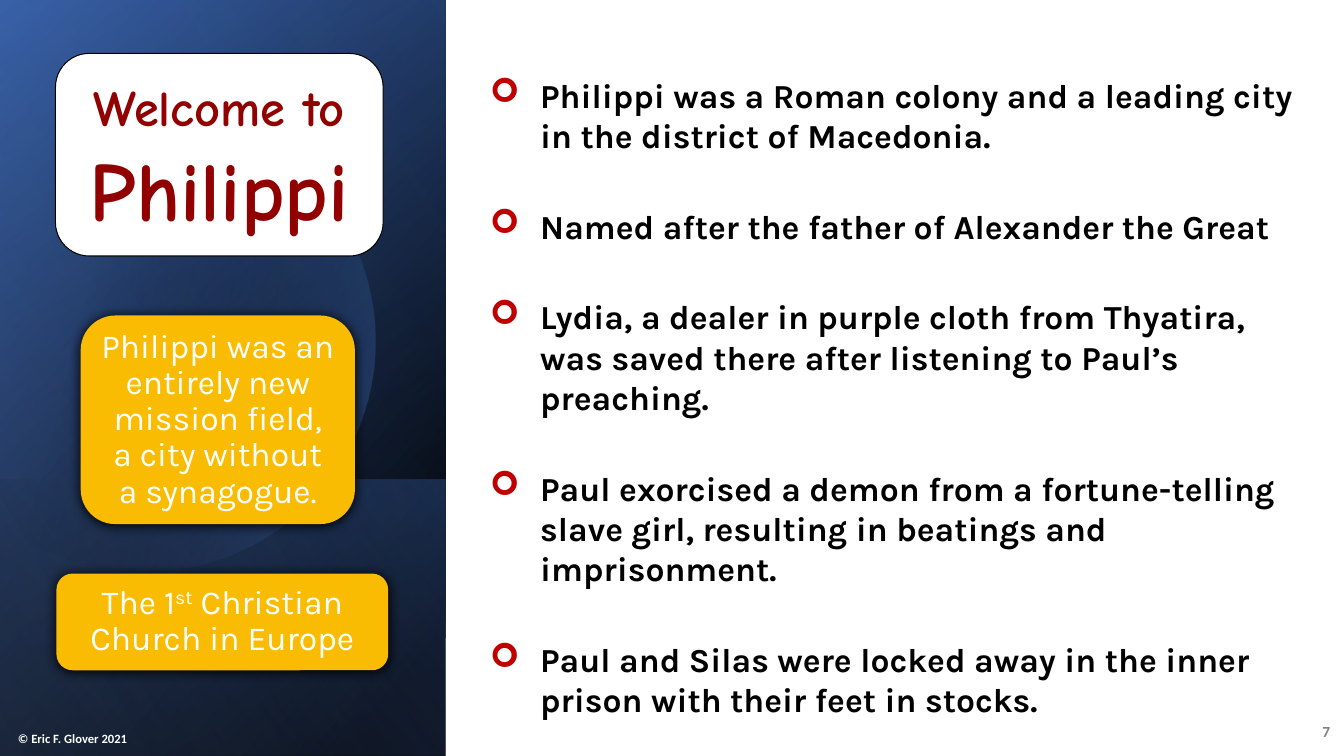
import pptx
import pptx.util
import pptx.dml.color
import pptx.enum.shapes
import pptx.enum.text
import pptx.oxml.ns
from lxml import etree
from dataclasses import dataclass

PX = 9144  # EMU per px, 100 px to the inch
Pt = pptx.util.Pt
qn = pptx.oxml.ns.qn
SHAPE = pptx.enum.shapes.MSO_SHAPE
ALIGN = pptx.enum.text.PP_ALIGN
ANCHOR = pptx.enum.text.MSO_ANCHOR
AUTOSIZE = pptx.enum.text.MSO_AUTO_SIZE


@dataclass(frozen=True)
class Theme:
    white: str = "FFFFFF"
    black: str = "000000"
    navy: str = "2F5597"
    blue: str = "4472C4"
    pale_blue: str = "8FAADC"
    gold: str = "F9BC02"
    maroon: str = "910101"
    red: str = "C00000"
    grey: str = "808080"
    body_font: str = "Karla"
    title_font: str = "Comic Neue"
    small_font: str = "Calibri"
    place_size: int = 60
    gap_size: int = 40
    welcome_size: int = 36
    body_size: int = 24
    number_size: int = 11
    credit_size: int = 9


THEME = Theme()


def px(*lengths):
    return [round(length * PX) for length in lengths]


def rgb(colour):
    return pptx.dml.color.RGBColor.from_string(colour)


def apply(target, formats):
    for name, value in formats.items():
        setattr(target, name, value)


def add_xml(parent, tag, **attributes):
    return etree.SubElement(parent, qn(tag), {k: str(v) for k, v in attributes.items()})


def add_box(slide, box, fill, kind=SHAPE.RECTANGLE):
    shape = slide.shapes.add_shape(kind, *px(*box))
    shape.shadow.inherit = False
    shape.line.fill.background()
    shape.fill.solid()
    shape.fill.fore_color.rgb = rgb(fill)
    return shape


def fill_gradient(shape, stops, angle):
    """Stops are (position %, colour, opacity %); the angle runs clockwise."""
    shape.fill.gradient()
    shape.fill.gradient_angle = 360 - angle
    for stop, (position, colour, _) in zip(shape.fill.gradient_stops, stops):
        stop.position = position / 100
        stop.color.rgb = rgb(colour)
    colours = shape.element.spPr.iter(qn("a:srgbClr"))
    for colour, (_, _, opacity) in zip(list(colours), stops):
        add_xml(colour, "a:alpha", val=opacity * 1000)


def write(frame, paragraphs, font, frame_format=None, paragraph_format=None):
    """Each paragraph is a list of (text, font changes)."""
    apply(frame, {"word_wrap": True, **(frame_format or {})})
    for index, runs in enumerate(paragraphs):
        paragraph = frame.paragraphs[0] if index == 0 else frame.add_paragraph()
        apply(paragraph, paragraph_format or {})
        for text, changes in runs:
            run = paragraph.add_run()
            run.text = text
            look = {**font, **changes}
            run.font.color.rgb = rgb(look.pop("colour"))
            baseline = look.pop("baseline", None)
            apply(run.font, look)
            if baseline:
                run._r.get_or_add_rPr().set("baseline", str(baseline * 1000))


def add_backdrop(slide, box):
    left, top, width, height = box

    def add_turned_panel(panel_top, panel_height, stops, angle):
        # A quarter turn swaps the sides around the same centre
        shift = (width - panel_height) / 2
        panel = add_box(slide, (left + shift, panel_top - shift, panel_height, width), THEME.black)
        panel.rotation = 90
        panel.element.spPr.find(qn("a:xfrm")).set("flipH", "1")
        fill_gradient(panel, stops, angle)

    add_turned_panel(top, height, [(8, THEME.black, 100), (100, THEME.navy, 100)], 50)
    add_turned_panel(top, height, [(0, THEME.black, 0), (99, THEME.blue, 46)], 30)
    add_turned_panel(top + 476, height - 476, [(2, THEME.blue, 29), (100, THEME.black, 30)], 130)
    add_disc(slide, left, top)
    add_turned_panel(top, height, [(0, THEME.black, 0), (99, THEME.pale_blue, 11)], 120)


def add_disc(slide, left, top):
    # Two-number entries are straight sides, six-number entries are curves
    outline = [(246, 112, 335, 177, 363, 275), (398, 397, 328, 523, 207, 558),
               (131, 580, 53, 561, -3, 514), (-15, 503), (-15, 175), (0, 161),
               (23, 142, 50, 128, 80, 119), (103, 113, 126, 110, 149, 110)]
    start = pen = (149, 110)
    steps = 24
    points = []
    for segment in outline:
        if len(segment) == 2:
            points.append(segment)
        else:
            x = (pen[0], *segment[0::2])
            y = (pen[1], *segment[1::2])
            for step in range(1, steps + 1):
                t = step / steps
                weights = ((1 - t) ** 3, 3 * t * (1 - t) ** 2, 3 * t * t * (1 - t), t ** 3)
                points.append([sum(w * v for w, v in zip(weights, axis)) for axis in (x, y)])
        pen = segment[-2:]
    builder = slide.shapes.build_freeform(*px(left + start[0], top + start[1]))
    builder.add_line_segments([px(left + x, top + y) for x, y in points], close=True)
    disc = builder.convert_to_shape()
    disc.shadow.inherit = False
    disc.line.fill.background()
    fill_gradient(disc, [(29, THEME.black, 0), (100, THEME.blue, 43)], 14)


def add_welcome(slide, box):
    welcome = add_box(slide, box, THEME.white, SHAPE.ROUNDED_RECTANGLE)
    welcome.line.color.rgb = rgb(THEME.black)
    welcome.line.width = Pt(0.75)
    write(welcome.text_frame,
          [[("Welcome to", {}), (" ", {"size": Pt(THEME.gap_size)}),
            ("Philippi", {"size": Pt(THEME.place_size)})]],
          {"name": THEME.title_font, "size": Pt(THEME.welcome_size), "bold": True,
           "colour": THEME.maroon},
          {"vertical_anchor": ANCHOR.MIDDLE, "margin_top": 0, "margin_bottom": 0},
          {"alignment": ALIGN.CENTER, "space_after": Pt(6)})


def add_fact(slide, box, runs):
    fact = add_box(slide, box, THEME.gold, SHAPE.ROUNDED_RECTANGLE)
    effects = fact.element.spPr.find(qn("a:effectLst"))
    shadow = add_xml(effects, "a:outerShdw", blurRad=Pt(8.5), dist=Pt(1), dir=90 * 60000,
                     algn="t", rotWithShape=0)
    add_xml(shadow, "a:srgbClr", val=THEME.black)
    write(fact.text_frame, [runs],
          {"name": THEME.body_font, "size": Pt(THEME.body_size), "colour": THEME.white},
          {"vertical_anchor": ANCHOR.MIDDLE},
          {"alignment": ALIGN.CENTER, "line_spacing": 0.9})


def add_story(slide, box, events):
    frame = slide.shapes.add_textbox(*px(*box)).text_frame
    write(frame, [[(event, {})] for event in events],
          {"name": THEME.body_font, "size": Pt(THEME.body_size), "bold": True,
           "colour": THEME.black},
          {"auto_size": AUTOSIZE.SHAPE_TO_FIT_TEXT}, {"space_after": Pt(36)})
    for paragraph in frame.paragraphs:
        properties = paragraph._p.get_or_add_pPr()
        properties.set("marL", str(50 * PX))
        properties.set("indent", str(-50 * PX))
        add_xml(add_xml(properties, "a:buClr"), "a:srgbClr", val=THEME.red)
        add_xml(properties, "a:buFont", typeface="Wingdings")
        add_xml(properties, "a:buChar", char="➢")


def add_small_print(slide, box, text, size, colour, anchor, paragraph_format):
    frame = slide.shapes.add_textbox(*px(*box)).text_frame
    write(frame, [[(text, {})]],
          {"name": THEME.small_font, "size": Pt(size), "bold": True, "colour": colour},
          {"vertical_anchor": anchor}, paragraph_format)


def main():
    deck = pptx.Presentation()
    deck.slide_width, deck.slide_height = px(1333, 750)
    slide = deck.slides.add_slide(deck.slide_layouts[6])

    # Page and blue side panel
    add_box(slide, (0, 0, 1333, 750), THEME.white)
    add_backdrop(slide, (0, 0, 442, 750))

    # Page number, title and credit
    add_small_print(slide, (1280, 706, 49, 40), "7", THEME.number_size, THEME.grey,
                    ANCHOR.MIDDLE, {"alignment": ALIGN.RIGHT, "space_after": Pt(6)})
    add_welcome(slide, (55, 53, 325, 201))
    add_small_print(slide, (8, 717, 157, 28), "© Eric F. Glover 2021", THEME.credit_size,
                    THEME.white, ANCHOR.BOTTOM, {"alignment": ALIGN.LEFT})

    # Story of the city
    add_story(slide, (476, 69, 830, 576), [
        "Philippi was a Roman colony and a leading city in the district of Macedonia.",
        "Named after the father of Alexander the Great",
        "Lydia, a dealer in purple cloth from Thyatira, was saved there after listening to Paul’s preaching.",
        "Paul exorcised a demon from a fortune-telling slave girl, resulting in beatings and imprisonment.",
        "Paul and Silas were locked away in the inner prison with their feet in stocks.",
    ])

    # Gold facts
    add_fact(slide, (80, 313, 272, 207),
             [("Philippi was an entirely new mission field, a city without a synagogue.", {})])
    add_fact(slide, (56, 569, 329, 96),
             [("The 1", {}), ("st", {"baseline": 30}), (" Christian Church in Europe", {})])

    deck.save("out.pptx")


if __name__ == "__main__":
    main()
